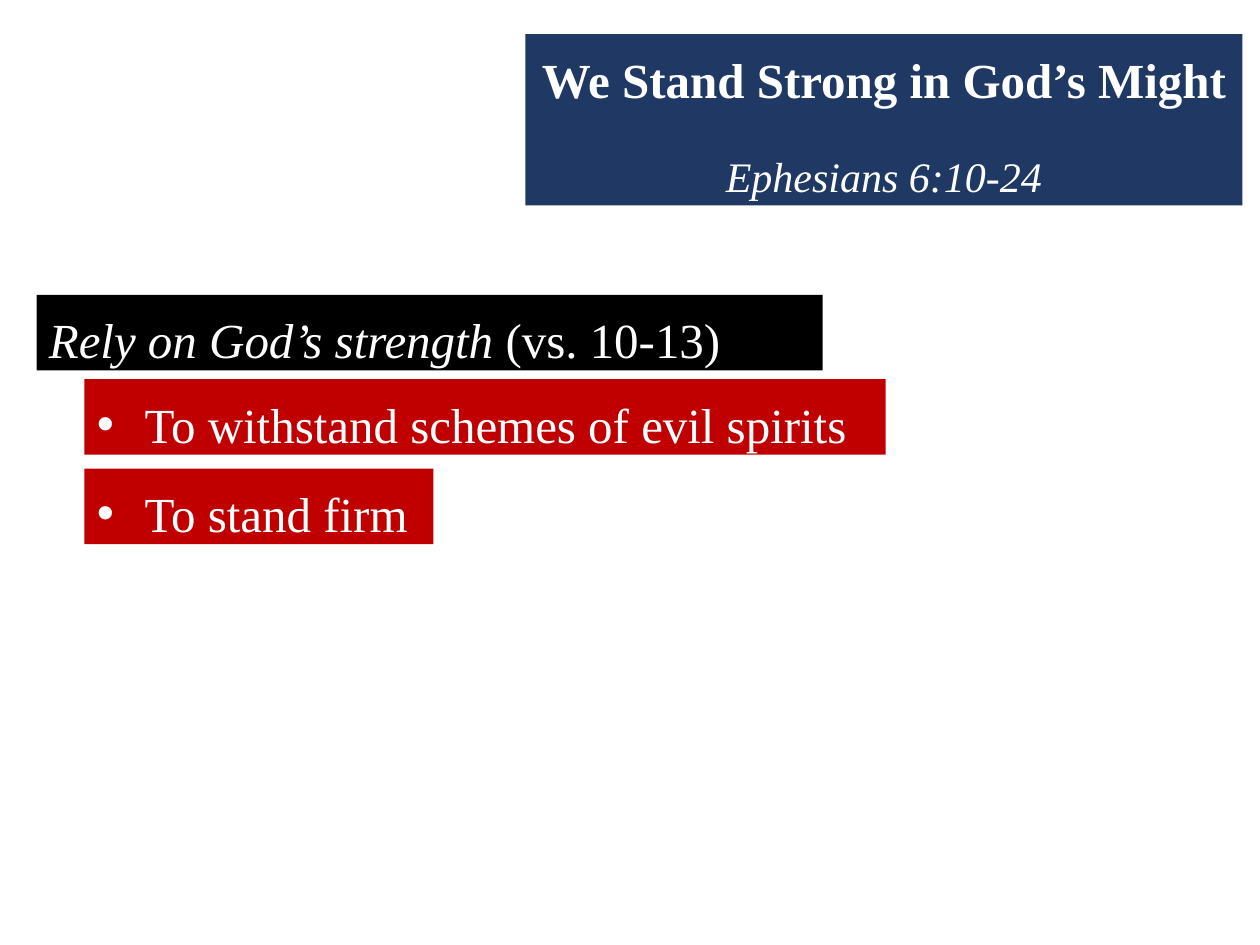
from dataclasses import dataclass

from lxml import etree
from pptx import Presentation
from pptx.dml.color import RGBColor
from pptx.enum.text import MSO_ANCHOR, MSO_AUTO_SIZE, PP_ALIGN
from pptx.oxml.ns import qn
from pptx.util import Inches, Pt

NAVY = RGBColor(0x20, 0x38, 0x64)
BLACK = RGBColor(0, 0, 0)
RED = RGBColor(0xC0, 0, 0)
WHITE = RGBColor(0xFF, 0xFF, 0xFF)
FONT = "Times New Roman"
CENTER, LEFT = PP_ALIGN.CENTER, PP_ALIGN.LEFT
TOP = MSO_ANCHOR.TOP
GROW = MSO_AUTO_SIZE.SHAPE_TO_FIT_TEXT
TITLE_ONLY = 5
SLIDE_WIDTH, SLIDE_HEIGHT = Inches(10), Inches(7.5)
BULLET_INDENT = Inches(0.38)


@dataclass
class Box:
    """A filled text panel, placed in percent of the slide's size."""
    left: float
    top: float
    width: float
    height: float
    fill: RGBColor


@dataclass
class Point:
    box: Box
    text: str


HEADER = Box(41.7, 3.6, 56.9, 18.13, NAVY)
HEADING = Box(2.9, 31.2, 62.4, 8, BLACK)
POINTS = [
    Point(Box(6.7, 40.13, 63.6, 8, RED), "To withstand schemes of evil spirits"),
    Point(Box(6.7, 49.6, 27.7, 8, RED), "To stand firm"),
]


def format_box(shape, box: Box):
    """Place and fill a text shape, then return its text frame."""
    shape.left = int(SLIDE_WIDTH * box.left / 100)
    shape.top = int(SLIDE_HEIGHT * box.top / 100)
    shape.width = int(SLIDE_WIDTH * box.width / 100)
    shape.height = int(SLIDE_HEIGHT * box.height / 100)
    shape.fill.solid()
    shape.fill.fore_color.rgb = box.fill
    frame = shape.text_frame
    frame.word_wrap = True
    frame.auto_size = GROW
    frame.vertical_anchor = TOP
    return frame


def add_box(slide, box: Box):
    return format_box(slide.shapes.add_textbox(0, 0, 0, 0), box)


def format_paragraph(paragraph, size: int = 28, alignment=LEFT, after: int = 0) -> None:
    paragraph.alignment = alignment
    paragraph.line_spacing = 1.15
    paragraph.space_before = Pt(12)
    paragraph.space_after = Pt(after)
    paragraph.font.name = FONT
    paragraph.font.size = Pt(size)
    paragraph.font.color.rgb = WHITE


def add_bullet(paragraph) -> None:
    properties = paragraph._p.get_or_add_pPr()
    properties.set("marL", str(BULLET_INDENT))
    properties.set("indent", str(-BULLET_INDENT))
    bullet_font = etree.Element(qn("a:buFont"), typeface="Arial")
    bullet = etree.Element(qn("a:buChar"), char="•")
    # Bullets come after the spacing and before the default run properties
    properties.find(qn("a:defRPr")).addprevious(bullet_font)
    bullet_font.addnext(bullet)


def main() -> None:
    presentation = Presentation()
    presentation.slide_width, presentation.slide_height = SLIDE_WIDTH, SLIDE_HEIGHT
    slide = presentation.slides.add_slide(presentation.slide_layouts[TITLE_ONLY])

    # Title and passage
    frame = format_box(slide.shapes.title, HEADER)
    title = frame.paragraphs[0]
    title.text = "We Stand Strong in God’s Might"
    format_paragraph(title, 28, CENTER, 8)
    title.font.bold = True
    passage = frame.add_paragraph()
    passage.text = "Ephesians 6:10-24"
    format_paragraph(passage, 24, CENTER, 8)
    passage.font.italic = True

    # Section heading
    heading = add_box(slide, HEADING).paragraphs[0]
    format_paragraph(heading)
    phrase = heading.add_run()
    phrase.text = "Rely on God’s strength "
    phrase.font.italic = True
    heading.add_run().text = "(vs. 10-13)"

    # Bulleted points
    for point in POINTS:
        paragraph = add_box(slide, point.box).paragraphs[0]
        paragraph.text = point.text
        format_paragraph(paragraph)
        add_bullet(paragraph)

    presentation.save("out.pptx")


if __name__ == "__main__":
    main()
